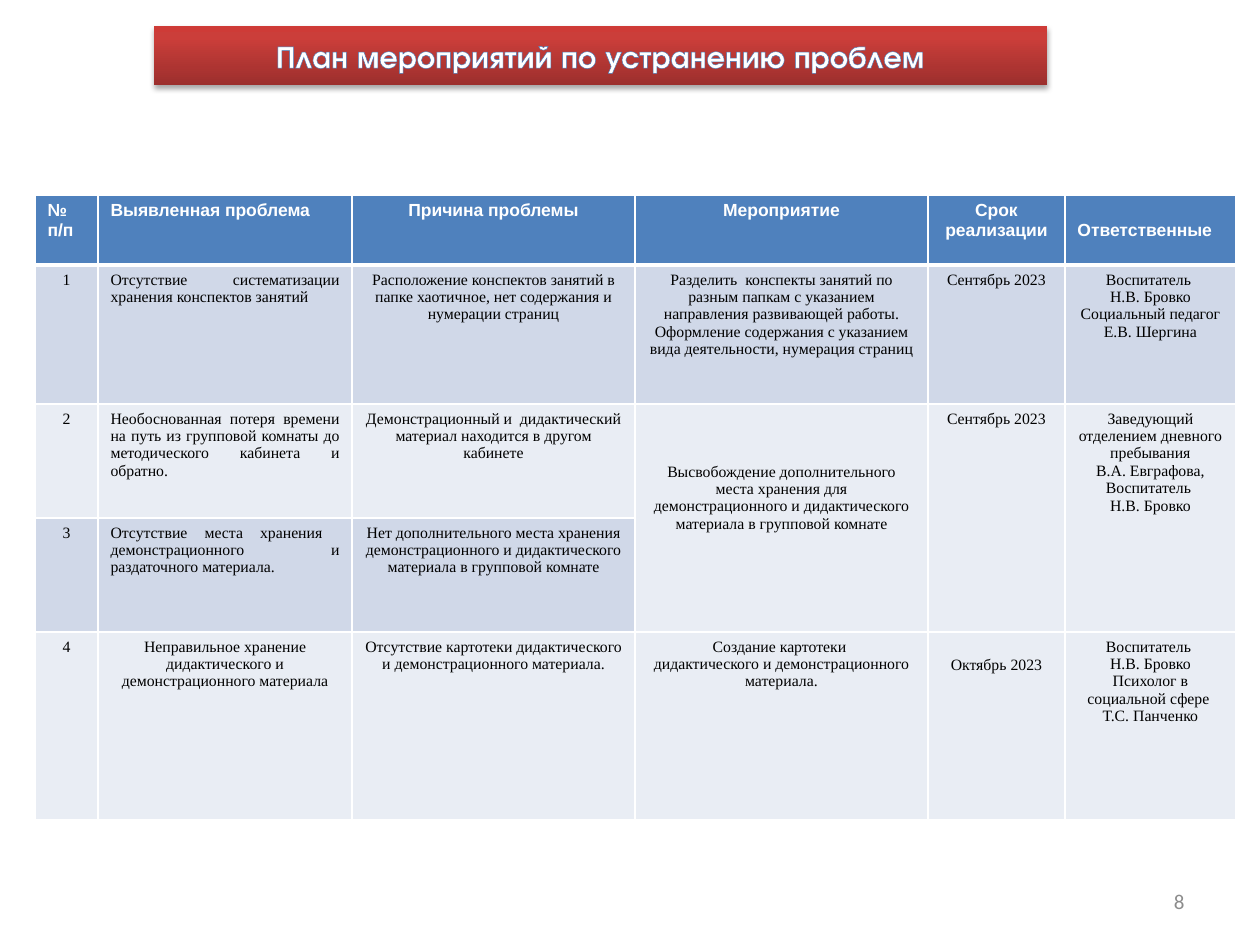
from pptx import Presentation, util as u
from pptx.dml.color import RGBColor
from pptx.enum import shapes, text
from pptx.oxml import parse_xml

SCALE = 914400 // 126
NS = 'xmlns:a="http://schemas.openxmlformats.org/drawingml/2006/main"'
LEFT, MID, RIGHT, JUST = (text.PP_ALIGN.LEFT, text.PP_ALIGN.CENTER,
                          text.PP_ALIGN.RIGHT, text.PP_ALIGN.JUSTIFY)
TITLE = dict(name="TeX Gyre Adventor", size=18, bold=True, color="FFFFFF")
HEAD = dict(name="Arial", size=10, bold=True, color="FFFFFF")
BODY = dict(name="Times New Roman", size=9, bold=False, color="000000")
PAGE = dict(name="Calibri", size=12, bold=False, color="8C8C8C")
BANDS = ["4F81BD", "D0D8E8", "E9EDF4", "D0D8E8", "E9EDF4"]
COLS = [63, 254, 283, 293, 137, 171]
ROWS = [70, 139, 114, 114, 188]
MERGED = [3, 4, 5]
ALIGN = {(0, 0): LEFT, (0, 1): LEFT, (0, 5): LEFT,
         (1, 1): JUST, (2, 1): JUST, (3, 1): JUST}
DROP = {(0, 5): 20, (2, 3): 53, (4, 4): 18}
PLAN = [
    ["№\nп/п", "Выявленная проблема", "Причина проблемы", "Мероприятие",
     "Срок реализации", "Ответственные"],
    ["1", "Отсутствие систематизации хранения конспектов занятий",
     "Расположение конспектов занятий в папке хаотичное, нет содержания и нумерации страниц",
     "Разделить  конспекты занятий по разным папкам с указанием направления развивающей работы.\n"
     "Оформление содержания с указанием вида деятельности, нумерация страниц",
     "Сентябрь 2023",
     "Воспитатель \nН.В. Бровко\nСоциальный педагог\nЕ.В. Шергина"],
    ["2", "Необоснованная потеря времени на путь из групповой комнаты "
     "до методического кабинета и обратно.",
     "Демонстрационный и  дидактический материал находится в другом кабинете",
     "Высвобождение дополнительного места хранения для демонстрационного "
     "и дидактического материала в групповой комнате",
     "Сентябрь 2023",
     "Заведующий отделением дневного пребывания\nВ.А. Евграфова,\nВоспитатель \nН.В. Бровко"],
    ["3", "Отсутствие места хранения  демонстрационного и раздаточного материала.",
     "Нет дополнительного места хранения демонстрационного и дидактического "
     "материала в групповой комнате", "", "", ""],
    ["4", "Неправильное хранение дидактического и демонстрационного материала",
     "Отсутствие картотеки дидактического и демонстрационного материала.",
     "Создание картотеки \nдидактического и демонстрационного материала.",
     "Октябрь 2023",
     "Воспитатель \nН.В. Бровко\nПсихолог в социальной сфере \nТ.С. Панченко"],
]


def px(n):
    return u.Emu(n * SCALE)


def rgb(code):
    return RGBColor.from_string(code)


def solid(code):
    return f'<a:solidFill><a:srgbClr val="{code}"/></a:solidFill>'


class Deck:
    def __init__(self):
        self.prs = Presentation()
        self.prs.slide_width, self.prs.slide_height = u.Inches(10), u.Inches(7.5)
        self.slide = self.prs.slides.add_slide(self.prs.slide_layouts[6])

    def put(self, frame, words, style, align):
        frame.word_wrap = True
        for i, line in enumerate(words.split("\n")):
            para = frame.add_paragraph() if i else frame.paragraphs[0]
            para.alignment = align
            run = para.add_run()
            run.text = line
            for key, val in style.items():
                if key == "color":
                    run.font.color.rgb = rgb(val)
                else:
                    setattr(run.font, key, u.Pt(val) if key == "size" else val)

    def banner(self, box, words, stops, edge):
        shape = self.slide.shapes.add_shape(shapes.MSO_SHAPE.RECTANGLE, *map(px, box))
        shape.shadow.inherit = False
        shape.fill.background()
        shape.line.fill.background()
        props = shape._element.spPr
        marks = "".join(f'<a:gs pos="{pos * 1000}"><a:srgbClr val="{code}"/></a:gs>'
                        for pos, code in stops)
        props.replace(props.find("{*}noFill"), parse_xml(
            f'<a:gradFill {NS}><a:gsLst>{marks}</a:gsLst><a:lin ang="16200000" scaled="0"/></a:gradFill>'))
        props.find("{*}effectLst").append(parse_xml(
            f'<a:outerShdw {NS} blurRad="{u.Pt(3.1)}" dist="{u.Pt(1.8)}" dir="5400000" rotWithShape="0">'
            '<a:srgbClr val="000000"><a:alpha val="35000"/></a:srgbClr></a:outerShdw>'))
        frame = shape.text_frame
        frame.vertical_anchor = text.MSO_ANCHOR.MIDDLE
        self.put(frame, words, TITLE, MID)
        font = frame.paragraphs[0].runs[0]._r.get_or_add_rPr()
        font.insert(0, parse_xml(f'<a:ln {NS} w="{u.Pt(0.83)}">{solid(edge)}</a:ln>'))

    def label(self, box, words, style, align):
        frame = self.slide.shapes.add_textbox(*map(px, box)).text_frame
        frame.vertical_anchor = text.MSO_ANCHOR.MIDDLE
        self.put(frame, words, style, align)

    def border(self, cell, row):
        props = cell._tc.get_or_add_tcPr()
        wide = {"T": 3 if row == 1 else 1, "B": 1 if row else 3}
        for side in "LRTB":
            props.append(parse_xml(
                f'<a:ln{side} {NS} w="{u.Pt(wide.get(side, 1))}">{solid("FFFFFF")}</a:ln{side}>'))

    def table(self, left, top):
        box = (left, top, sum(COLS), sum(ROWS))
        grid = self.slide.shapes.add_table(len(ROWS), len(COLS), *map(px, box)).table
        for col, wide in zip(grid.columns, COLS):
            col.width = px(wide)
        for row, high in zip(grid.rows, ROWS):
            row.height = px(high)
        for col in MERGED:
            grid.cell(2, col).merge(grid.cell(3, col))
        for r, line in enumerate(PLAN):
            for c, words in enumerate(line):
                cell = grid.cell(r, c)
                self.border(cell, r)
                cell.fill.solid()
                cell.fill.fore_color.rgb = rgb(BANDS[2 if cell.is_spanned else r])
                if cell.is_spanned:
                    continue
                cell.margin_top = px(6 + DROP.get((r, c), 0))
                self.put(cell.text_frame, words, BODY if r else HEAD,
                         ALIGN.get((r, c), MID))


def main():
    deck = Deck()
    deck.banner((154, 26, 893, 59), "План мероприятий по устранению проблем",
                [(0, "9C2F2D"), (80, "CB3E3A"), (100, "CE3B37")], "467AB8")
    deck.label((903, 876, 294, 50), "8", PAGE, RIGHT)
    deck.table(35, 195)
    deck.prs.save("out.pptx")


if __name__ == "__main__":
    main()
